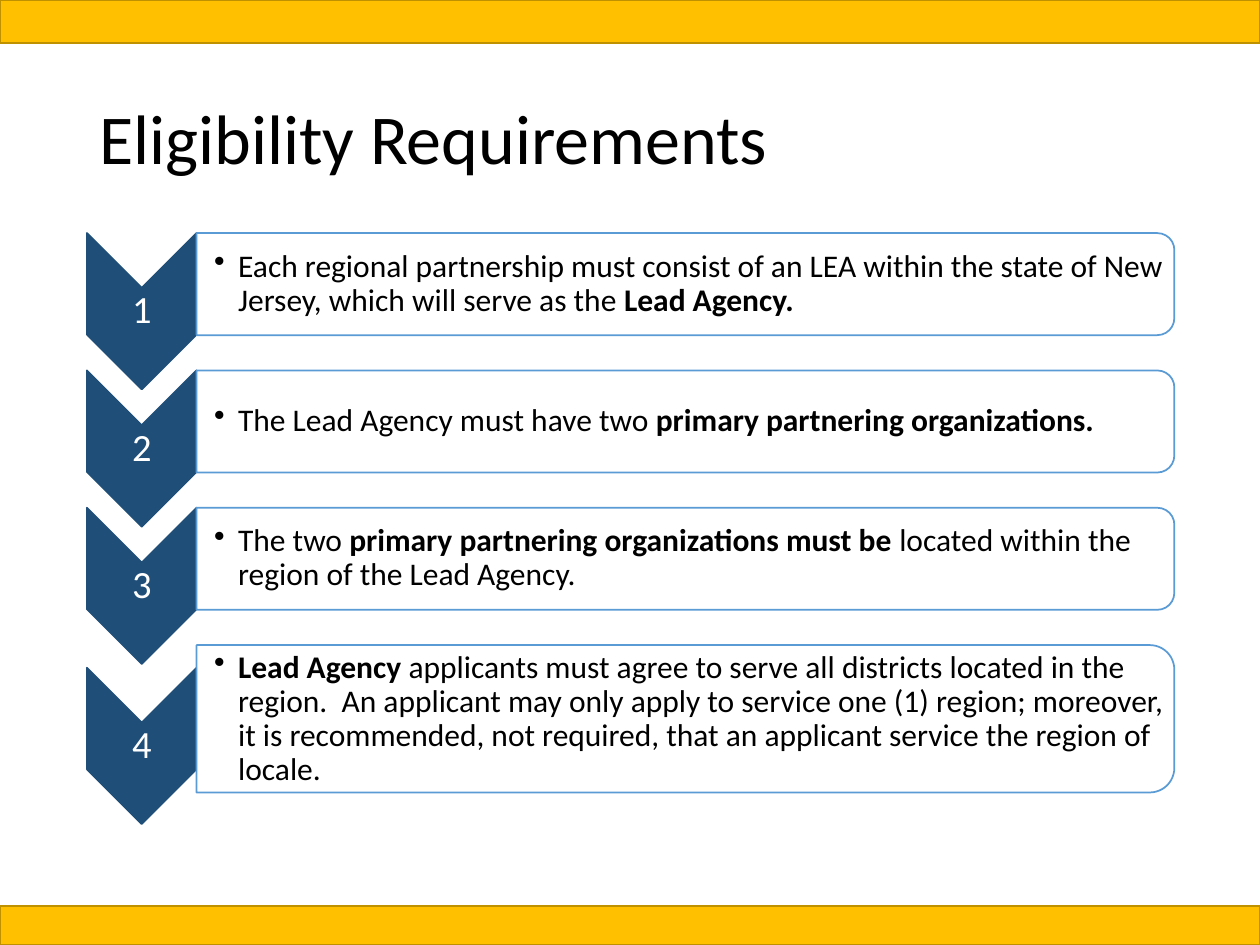
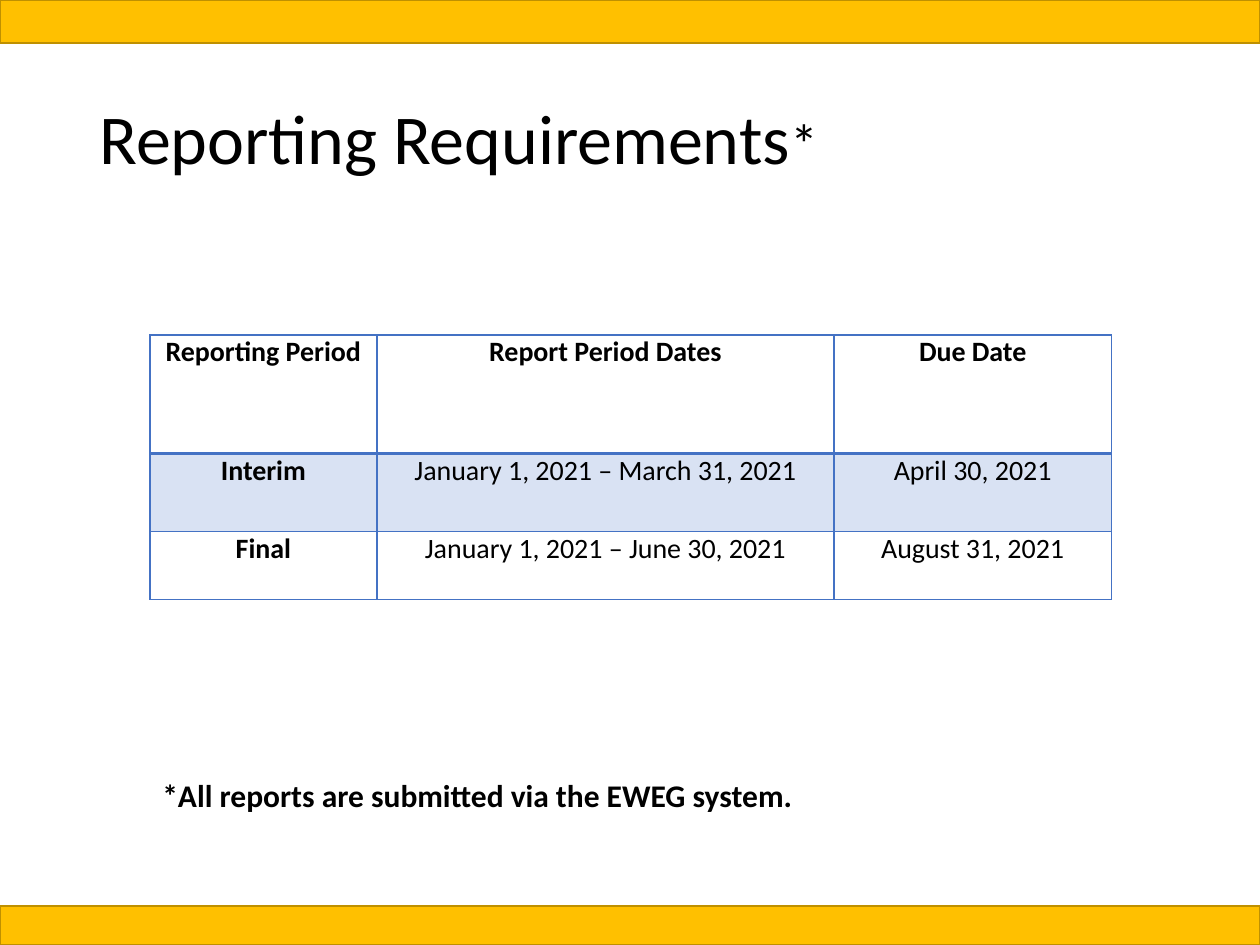
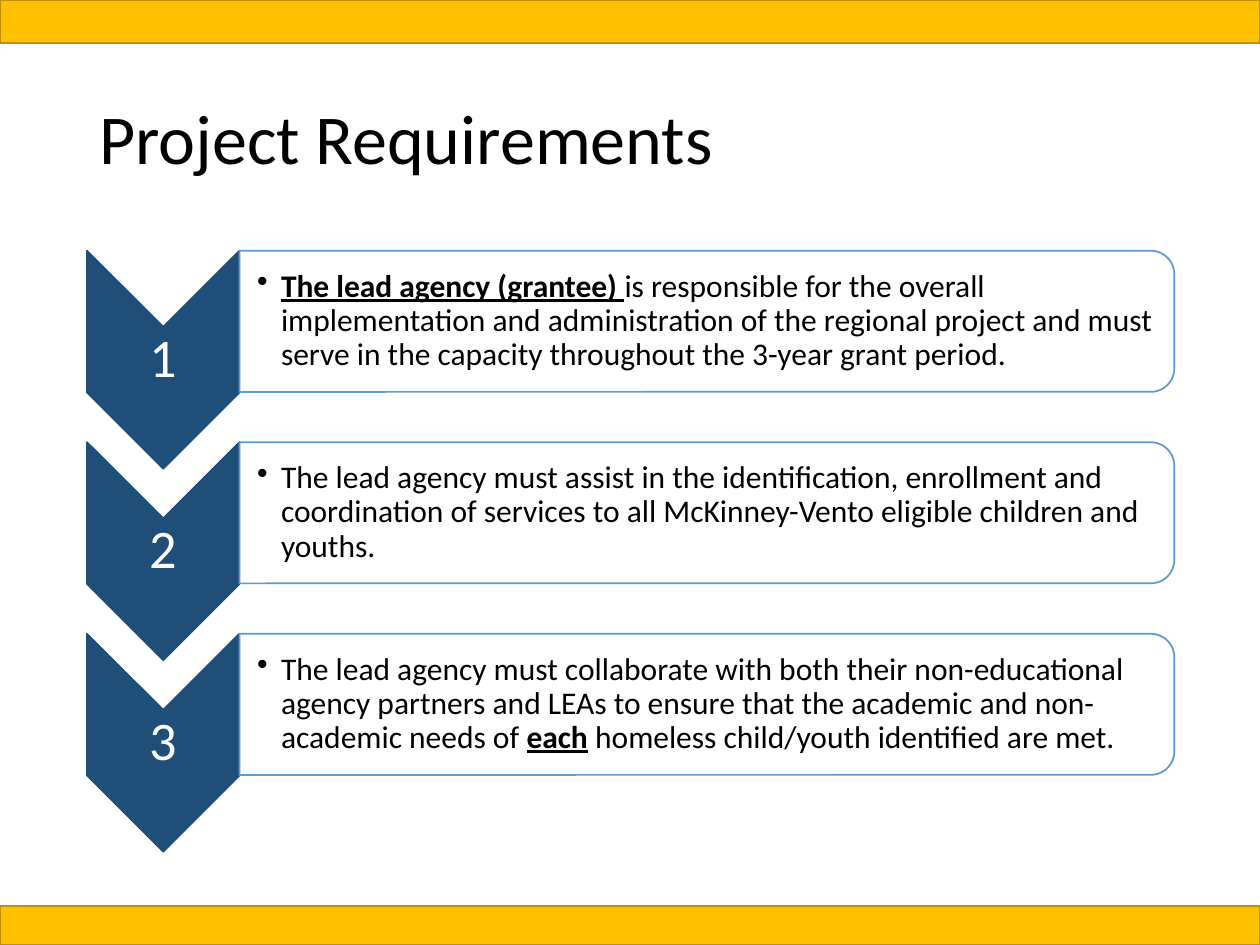
from dataclasses import dataclass

from lxml import etree
from pptx import Presentation
from pptx.dml.color import RGBColor
from pptx.enum.shapes import MSO_SHAPE
from pptx.enum.text import MSO_ANCHOR, PP_ALIGN
from pptx.oxml.ns import qn
from pptx.util import Inches, Pt

RECTANGLE = MSO_SHAPE.RECTANGLE
CHEVRON = MSO_SHAPE.CHEVRON
ROUNDED_TOP = MSO_SHAPE.ROUND_2_SAME_RECTANGLE
MIDDLE, TOP = MSO_ANCHOR.MIDDLE, MSO_ANCHOR.TOP
LEFT, CENTER = PP_ALIGN.LEFT, PP_ALIGN.CENTER


@dataclass(frozen=True)
class Theme:
    font: str = "Calibri"
    text: str = "000000"
    paper: str = "FFFFFF"
    band: str = "FFC000"
    band_line: str = "BF9000"
    chevron: str = "1F4E79"
    panel_line: str = "5B9BD5"
    table: str = "4472C4"
    title_size: int = 40
    title_mark_size: int = 32
    body_size: int = 18
    table_size: int = 16


@dataclass(frozen=True)
class StepLayout:
    """Measures of a numbered step list, in inches and points."""
    top: float
    pitch: float
    chevron_width: float
    chevron_height: float
    panel_height: float
    number_size: int


THEME = Theme()
SLIDE_WIDTH, SLIDE_HEIGHT = 10, 7.5
STEPS_LEFT, STEPS_RIGHT = 0.69, 9.32
DEFAULT_INSETS = (0.1, 0.05, 0.1, 0.05)

ELIGIBILITY_LAYOUT = StepLayout(1.85, 1.09, 0.87, 1.24, 0.81, 22)
PROJECT_LAYOUT = StepLayout(1.99, 1.52, 1.21, 1.73, 1.12, 31)

# Each step is a list of spans: text and style, where b is bold and u underlined.
ELIGIBILITY_STEPS = [
    [("Each regional partnership must consist of an LEA within the state of New "
      "Jersey, which will serve as the ", ""), ("Lead Agency.", "b")],
    [("The Lead Agency must have two ", ""),
     ("primary partnering organizations.", "b")],
    [("The two ", ""), ("primary partnering organizations must be ", "b"),
     ("located within the region of the Lead Agency.", "")],
    [("Lead Agency ", "b"),
     ("applicants must agree to serve all districts located in the region.  An "
      "applicant may only apply to service one (1) region; moreover, it is "
      "recommended, not required, that an applicant service the region of "
      "locale.", "")],
]
PROJECT_STEPS = [
    [("The lead agency (grantee) ", "bu"),
     ("is responsible for the overall implementation and administration of the "
      "regional project and must serve in the capacity throughout the 3-year "
      "grant period.", "")],
    [("The lead agency must assist in the identification, enrollment and "
      "coordination of services to all McKinney-Vento eligible children and "
      "youths.", "")],
    [("The lead agency must collaborate with both their non-educational agency "
      "partners and LEAs to ensure that the academic and non-academic needs of ", ""),
     ("each", "bu"), (" homeless child/youth identified are met.", "")],
]
REPORT_ROWS = [
    ["Reporting Period", "Report Period Dates", "Due Date"],
    ["Interim", "January 1, 2021 – March 31, 2021", "April 30, 2021"],
    ["Final", "January 1, 2021 – June 30, 2021", "August 31, 2021"],
]


def rgb(color):
    return RGBColor.from_string(color)


def fill_solid(fill, color, opacity=100):
    fill.solid()
    fill.fore_color.rgb = rgb(color)
    if opacity < 100:
        # python-pptx has no public setting for opacity.
        color_xml = fill._xPr.find(qn("a:solidFill"))[0]
        etree.SubElement(color_xml, qn("a:alpha"), val=str(opacity * 1000))


def add_span(para, text, size, color=THEME.text, style=""):
    span = para.add_run()
    span.text = text
    font = span.font
    font.name, font.size = THEME.font, Pt(size)
    font.color.rgb = rgb(color)
    font.bold = "b" in style
    font.underline = "u" in style


def add_text_box(page, left, top, width, height, anchor=TOP,
                 insets=DEFAULT_INSETS, align=LEFT, line_spacing=None):
    """Add an empty text box and return its first paragraph."""
    box = page.shapes.add_textbox(*map(Inches, (left, top, width, height)))
    frame = box.text_frame
    frame.word_wrap = True
    frame.vertical_anchor = anchor
    (frame.margin_left, frame.margin_top,
     frame.margin_right, frame.margin_bottom) = map(Inches, insets)
    para = frame.paragraphs[0]
    para.alignment = align
    para.line_spacing = line_spacing
    return para


def add_filled_shape(page, kind, left, top, width, height, fill, line, opacity=100):
    shape = page.shapes.add_shape(kind, *map(Inches, (left, top, width, height)))
    shape.shadow.inherit = False
    fill_solid(shape.fill, fill, opacity)
    shape.line.color.rgb = rgb(line)
    shape.line.width = Pt(1)
    return shape


def add_turned_shape(page, kind, left, top, width, height, fill, line, opacity=100):
    """Add a shape turned by 90 degrees that covers the given area."""
    shift = (width - height) / 2
    shape = add_filled_shape(page, kind, left + shift, top - shift, height, width,
                             fill, line, opacity)
    shape.rotation = 90


def add_bullet(para, indent):
    properties = para._p.get_or_add_pPr()
    properties.set("marL", str(Inches(indent)))
    properties.set("indent", str(-Inches(indent)))
    etree.SubElement(properties, qn("a:buChar"), char="•")


def add_page(deck, title):
    """Add a page with both bands and its title; return page and title paragraph."""
    page = deck.slides.add_slide(deck.slide_layouts[6])
    for top, height in ((0, 0.34), (7.19, 0.31)):
        add_filled_shape(page, RECTANGLE, 0, top, SLIDE_WIDTH, height,
                         THEME.band, THEME.band_line)
    para = add_text_box(page, 0.69, 0.4, 8.62, 1.45, MIDDLE, line_spacing=0.9)
    add_span(para, title, THEME.title_size)
    return page, para


def add_step(page, number, spans, layout, top, panel_height):
    width, height = layout.chevron_width, layout.chevron_height
    chevron_top = top + (panel_height - layout.panel_height) / 2
    add_turned_shape(page, CHEVRON, STEPS_LEFT, chevron_top, width, height,
                     THEME.chevron, THEME.chevron)
    para = add_text_box(page, STEPS_LEFT, chevron_top + width / 2, width,
                        height - width, MIDDLE, (0.02,) * 4, CENTER, 0.9)
    add_span(para, str(number), layout.number_size, THEME.paper)

    panel_left = STEPS_LEFT + width
    panel_width = STEPS_RIGHT - panel_left
    add_turned_shape(page, ROUNDED_TOP, panel_left, top, panel_width, panel_height,
                     THEME.paper, THEME.panel_line, opacity=90)
    corner = 0.05 * panel_height
    para = add_text_box(page, panel_left, top + corner, panel_width - corner,
                        panel_height - 2 * corner, MIDDLE,
                        (0.14, 0.01, 0.01, 0.01), line_spacing=0.9)
    add_bullet(para, 0.19)
    for text, style in spans:
        add_span(para, text, THEME.body_size, style=style)


def add_steps(page, steps, layout, last_panel_height=None):
    for index, spans in enumerate(steps):
        is_last = index == len(steps) - 1
        panel_height = is_last and last_panel_height or layout.panel_height
        add_step(page, index + 1, spans, layout,
                 layout.top + index * layout.pitch, panel_height)


def set_cell_borders(cell, color, widths):
    """Draw borders; widths maps L, R, T and B to points."""
    properties = cell._tc.get_or_add_tcPr()
    for index, (side, points) in enumerate(widths.items()):
        border = etree.Element(qn(f"a:ln{side}"), w=str(Pt(points)))
        solid = etree.SubElement(border, qn("a:solidFill"))
        etree.SubElement(solid, qn("a:srgbClr"), val=color)
        properties.insert(index, border)


def add_report_table(page, left, top, column_widths, row_heights):
    frame = page.shapes.add_table(
        len(row_heights), len(column_widths), Inches(left), Inches(top),
        Inches(sum(column_widths)), Inches(sum(row_heights)))
    table = frame.table
    table.first_row = table.horz_banding = False
    for column, width in zip(table.columns, column_widths):
        column.width = Inches(width)
    for row, height in zip(table.rows, row_heights):
        row.height = Inches(height)
    for row_index, texts in enumerate(REPORT_ROWS):
        for column_index, text in enumerate(texts):
            cell = table.cell(row_index, column_index)
            cell.margin_left = cell.margin_right = Inches(0.07)
            cell.margin_top = cell.margin_bottom = 0
            if row_index == 1:
                fill_solid(cell.fill, THEME.table, opacity=20)
            else:
                cell.fill.background()
            set_cell_borders(cell, THEME.table, {
                "L": 1, "R": 1,
                "T": 2 if row_index == 1 else 1,
                "B": 2 if row_index == 0 else 1})
            para = cell.text_frame.paragraphs[0]
            para.alignment = CENTER
            is_heading = row_index == 0 or column_index == 0
            add_span(para, text, THEME.table_size, style="b" if is_heading else "")


def main():
    deck = Presentation()
    deck.slide_width, deck.slide_height = Inches(SLIDE_WIDTH), Inches(SLIDE_HEIGHT)

    page, _ = add_page(deck, "Eligibility Requirements")
    add_steps(page, ELIGIBILITY_STEPS, ELIGIBILITY_LAYOUT, last_panel_height=1.17)

    page, title = add_page(deck, "Reporting Requirements")
    add_span(title, "*", THEME.title_mark_size)
    add_report_table(page, 1.19, 2.66, (1.8, 3.63, 2.2), (0.94, 0.62, 0.54))
    note = add_text_box(page, 1.19, 6.11, 7.63, 0.4)
    add_span(note, "*All reports are submitted via the EWEG system.",
             THEME.body_size, style="b")

    page, _ = add_page(deck, "Project Requirements")
    add_steps(page, PROJECT_STEPS, PROJECT_LAYOUT)

    deck.save("out.pptx")


if __name__ == "__main__":
    main()
